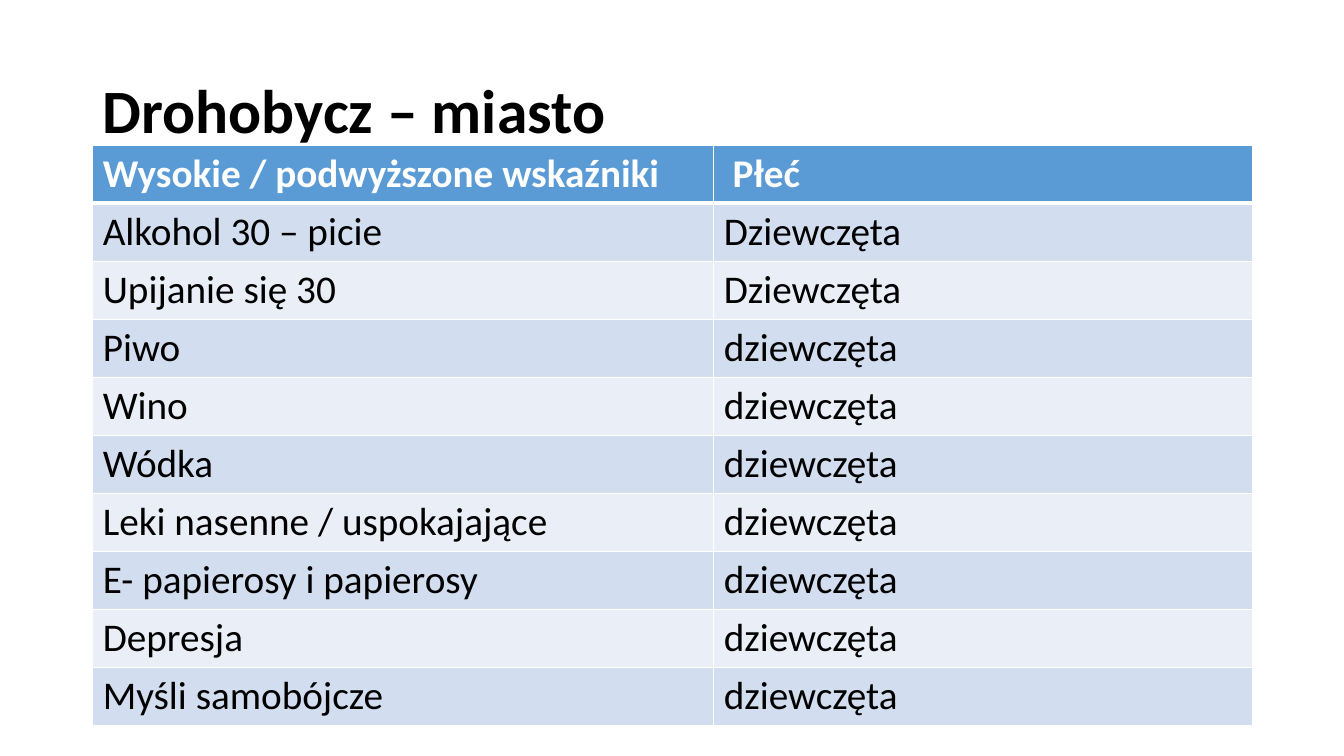
from dataclasses import dataclass
from typing import NamedTuple

import lxml.etree
import pptx
import pptx.dml.color
import pptx.enum.text
import pptx.oxml.ns
import pptx.slide
import pptx.table
import pptx.text.text
import pptx.util

Inches = pptx.util.Inches
Pt = pptx.util.Pt


@dataclass(frozen=True)
class Theme:
    font: str = "Calibri"
    title_size: int = 44
    table_size: int = 28
    text: str = "000000"
    header_text: str = "FFFFFF"
    header_fill: str = "5B9BD5"
    band_fills: tuple[str, str] = ("D2DEEF", "EAEFF7")
    border: str = "FFFFFF"
    border_width: int = 1
    header_rule_width: int = 3


class Indicator(NamedTuple):
    name: str
    sex: str


THEME = Theme()
HEADER = Indicator("Wysokie / podwyższone wskaźniki", " Płeć")
INDICATORS = [
    Indicator("Alkohol 30 – picie", "Dziewczęta"),
    Indicator("Upijanie się 30", "Dziewczęta"),
    Indicator("Piwo", "dziewczęta"),
    Indicator("Wino", "dziewczęta"),
    Indicator("Wódka", "dziewczęta"),
    Indicator("Leki nasenne / uspokajające", "dziewczęta"),
    Indicator("E- papierosy i papierosy", "dziewczęta"),
    Indicator("Depresja", "dziewczęta"),
    Indicator("Myśli samobójcze", "dziewczęta"),
]
LEFT = 0.92
TABLE_TOP = 1.44
COLUMN_WIDTHS = (6.16, 5.34)
ROW_HEIGHT = 0.57


def format_paragraph(
    paragraph: pptx.text.text._Paragraph, size: int, color: str, bold: bool
) -> None:
    paragraph.alignment = pptx.enum.text.PP_ALIGN.LEFT
    paragraph.font.name = THEME.font
    paragraph.font.size = Pt(size)
    paragraph.font.bold = bold
    paragraph.font.color.rgb = pptx.dml.color.RGBColor.from_string(color)


def set_borders(cell: pptx.table._Cell, top: int, bottom: int) -> None:
    """Draw all four cell borders; top and bottom widths are in points."""
    qualified = pptx.oxml.ns.qn
    properties = cell._tc.get_or_add_tcPr()
    widths = {
        "a:lnL": THEME.border_width,
        "a:lnR": THEME.border_width,
        "a:lnT": top,
        "a:lnB": bottom,
    }
    for tag, width in widths.items():
        line = lxml.etree.SubElement(properties, qualified(tag), w=str(Pt(width)))
        fill = lxml.etree.SubElement(line, qualified("a:solidFill"))
        lxml.etree.SubElement(fill, qualified("a:srgbClr"), val=THEME.border)


def add_title(slide: pptx.slide.Slide, text: str) -> None:
    title = slide.shapes.title
    title.left, title.top = Inches(LEFT), Inches(0.4)
    title.width, title.height = Inches(sum(COLUMN_WIDTHS)), Inches(1.45)
    frame = title.text_frame
    frame.text = text
    frame.word_wrap = True
    frame.auto_size = pptx.enum.text.MSO_AUTO_SIZE.NONE
    frame.vertical_anchor = pptx.enum.text.MSO_ANCHOR.MIDDLE
    paragraph = frame.paragraphs[0]
    paragraph.line_spacing = 0.9
    format_paragraph(paragraph, THEME.title_size, THEME.text, True)


def fill_row(table: pptx.table.Table, index: int, indicator: Indicator) -> None:
    is_header = index == 0
    fill = THEME.header_fill if is_header else THEME.band_fills[(index - 1) % 2]
    color = THEME.header_text if is_header else THEME.text
    top = THEME.header_rule_width if index == 1 else THEME.border_width
    bottom = THEME.header_rule_width if is_header else THEME.border_width
    for column, text in enumerate(indicator):
        cell = table.cell(index, column)
        cell.text = text
        format_paragraph(
            cell.text_frame.paragraphs[0], THEME.table_size, color, is_header
        )
        set_borders(cell, top, bottom)
        cell.fill.solid()
        cell.fill.fore_color.rgb = pptx.dml.color.RGBColor.from_string(fill)


def add_indicator_table(slide: pptx.slide.Slide) -> None:
    rows = [HEADER, *INDICATORS]
    table = slide.shapes.add_table(
        len(rows),
        len(COLUMN_WIDTHS),
        Inches(LEFT),
        Inches(TABLE_TOP),
        Inches(sum(COLUMN_WIDTHS)),
        Inches(ROW_HEIGHT * len(rows)),
    ).table
    for column, width in zip(table.columns, COLUMN_WIDTHS):
        column.width = Inches(width)
    for index, indicator in enumerate(rows):
        fill_row(table, index, indicator)


def main() -> None:
    presentation = pptx.Presentation()
    presentation.slide_width = Inches(13.33)
    presentation.slide_height = Inches(7.5)
    title_only = presentation.slide_layouts.get_by_name("Title Only")
    slide = presentation.slides.add_slide(title_only)
    add_title(slide, "Drohobycz – miasto")
    add_indicator_table(slide)
    presentation.save("out.pptx")


if __name__ == "__main__":
    main()
